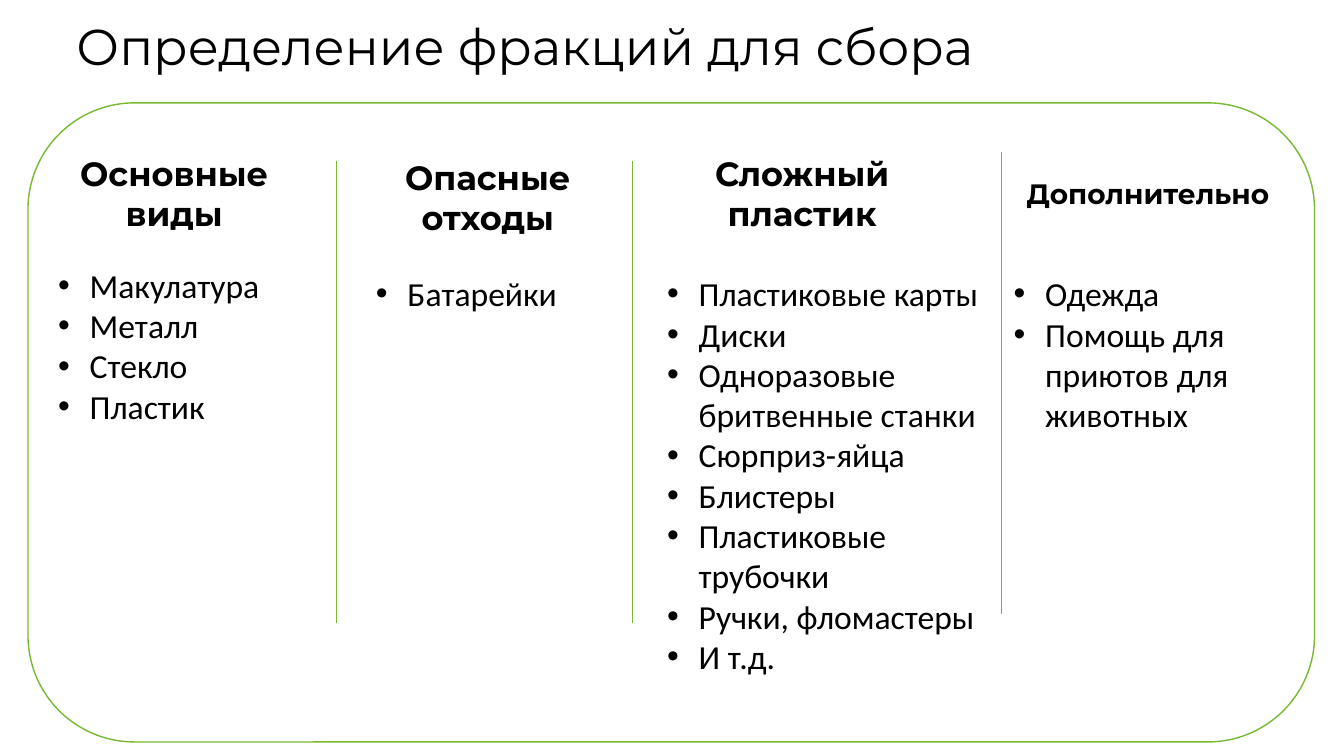
from dataclasses import dataclass

from lxml import etree
from pptx import Presentation
from pptx.dml.color import RGBColor
from pptx.enum.shapes import MSO_CONNECTOR, MSO_SHAPE
from pptx.enum.text import PP_ALIGN
from pptx.oxml.ns import qn
from pptx.util import Pt

ROUND = MSO_SHAPE.ROUNDED_RECTANGLE
LINE = MSO_CONNECTOR.STRAIGHT
LEFT = PP_ALIGN.LEFT
CENTER = PP_ALIGN.CENTER


@dataclass(frozen=True)
class Theme:
    ink: RGBColor = RGBColor(0, 0, 0)
    green: RGBColor = RGBColor(0x78, 0xB8, 0x33)
    head_font: str = "Montserrat"
    body_font: str = "Calibri"
    title: int = 36
    head: int = 24
    small: int = 20
    body: int = 24
    frame: float = 1
    rule: float = 0.5
    indent: float = 22.5


THEME = Theme()

PANEL = (20, 73.5, 919, 456.5)
TITLE = (47.5, 7, 718, 51)
RULES = [(220.5, 41.75), (432, 41.75), (695, 35.25)]
RULE_SPAN = 330

COLUMNS = [
    ((14.5, 112, 174, 145), "Основные виды", (3, -80, 174, 65.5), THEME.head,
     ["Макулатура", "Металл", "Стекло", "Пластик"]),
    ((241.5, 118, 174, 65.5), "Опасные отходы", (0, -83, 174, 65.5), THEME.head,
     ["Батарейки"]),
    ((449.5, 118, 245.5, 320), "Сложный пластик", (16.5, -86, 174, 65.5), THEME.head,
     ["Пластиковые карты", "Диски", "Одноразовые бритвенные станки",
      "Сюрприз-яйца", "Блистеры", "Пластиковые трубочки",
      "Ручки, фломастеры", "И т.д."]),
    ((697, 118, 209, 145), "Дополнительно", (-11, -69, 228, 32), THEME.small,
     ["Одежда", "Помощь для приютов для животных"]),
]


def shift(base, part):
    return base[0] + part[0], base[1] + part[1], part[2], part[3]


def add_dot(para):
    props = para._p.get_or_add_pPr()
    props.set("marL", str(Pt(THEME.indent)))
    props.set("indent", str(-Pt(THEME.indent)))
    etree.SubElement(props, qn("a:buFont")).set("typeface", "Arial")
    etree.SubElement(props, qn("a:buChar")).set("char", "•")


def add_text(slide, box, lines, font, size, bold=False, align=LEFT, dots=False):
    frame = slide.shapes.add_textbox(*map(Pt, box)).text_frame
    frame.word_wrap = True
    for i, line in enumerate(lines):
        para = frame.add_paragraph() if i else frame.paragraphs[0]
        para.alignment = align
        if dots:
            add_dot(para)
        run = para.add_run()
        run.text = line
        run.font.name = font
        run.font.size = Pt(size)
        run.font.bold = bold
        run.font.color.rgb = THEME.ink


def add_column(slide, box, head, place, size, items):
    add_text(slide, box, items, THEME.body_font, THEME.body, dots=True)
    add_text(slide, shift(box, place), [head], THEME.head_font, size,
             bold=True, align=CENTER)


def add_rule(slide, x, top, span):
    rule = slide.shapes.add_connector(LINE, Pt(x), Pt(top), Pt(x), Pt(top + span))
    rule.line.color.rgb = THEME.green
    rule.line.width = Pt(THEME.rule)
    etree.SubElement(rule._element.spPr, qn("a:effectLst"))


def add_panel(slide, box):
    panel = slide.shapes.add_shape(ROUND, *map(Pt, box))
    panel.shadow.inherit = False
    panel.fill.background()
    panel.line.color.rgb = THEME.green
    panel.line.width = Pt(THEME.frame)
    for place, *rest in COLUMNS:
        add_column(slide, shift(box, place), *rest)
    for x, top in RULES:
        add_rule(slide, box[0] + x, box[1] + top, RULE_SPAN)


def main():
    deck = Presentation()
    deck.slide_width, deck.slide_height = Pt(960), Pt(540)
    slide = deck.slides.add_slide(deck.slide_layouts[6])
    add_text(slide, TITLE, ["Определение фракций для сбора"],
             THEME.head_font, THEME.title)
    add_panel(slide, PANEL)
    deck.save("out.pptx")


if __name__ == "__main__":
    main()
